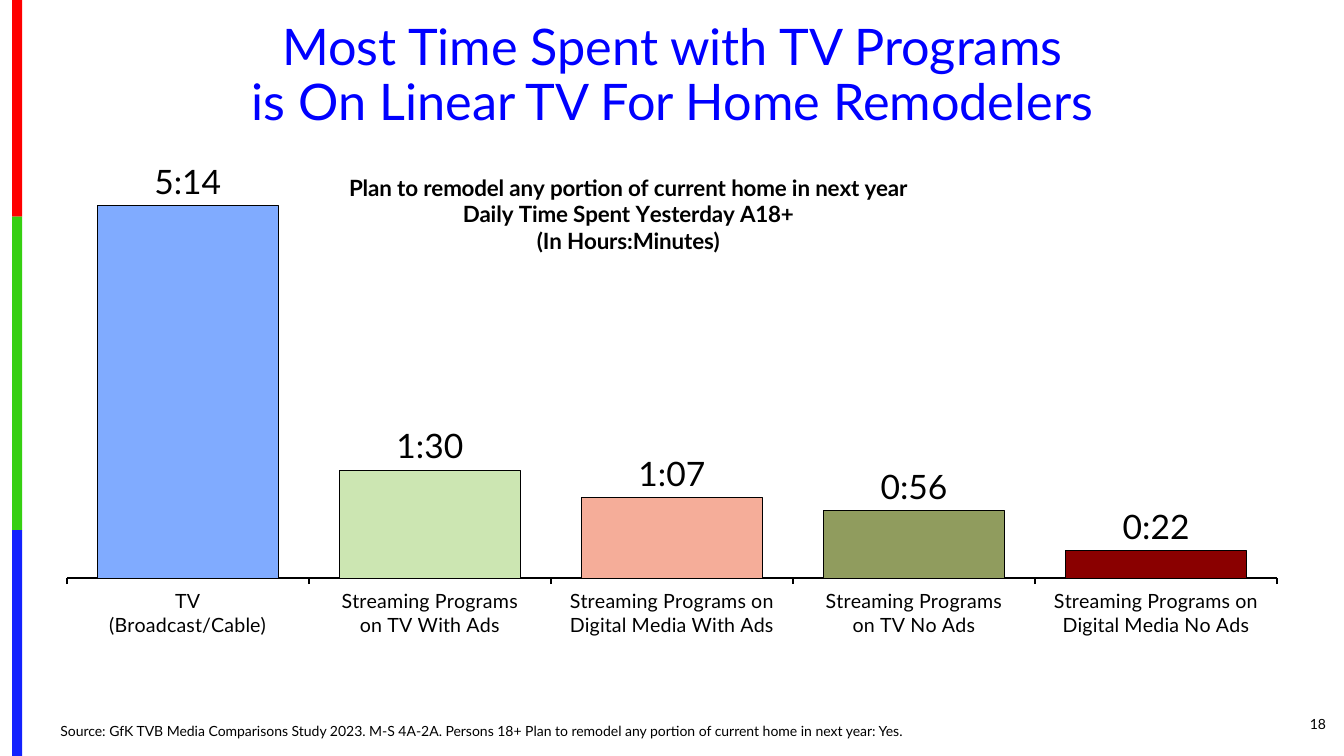
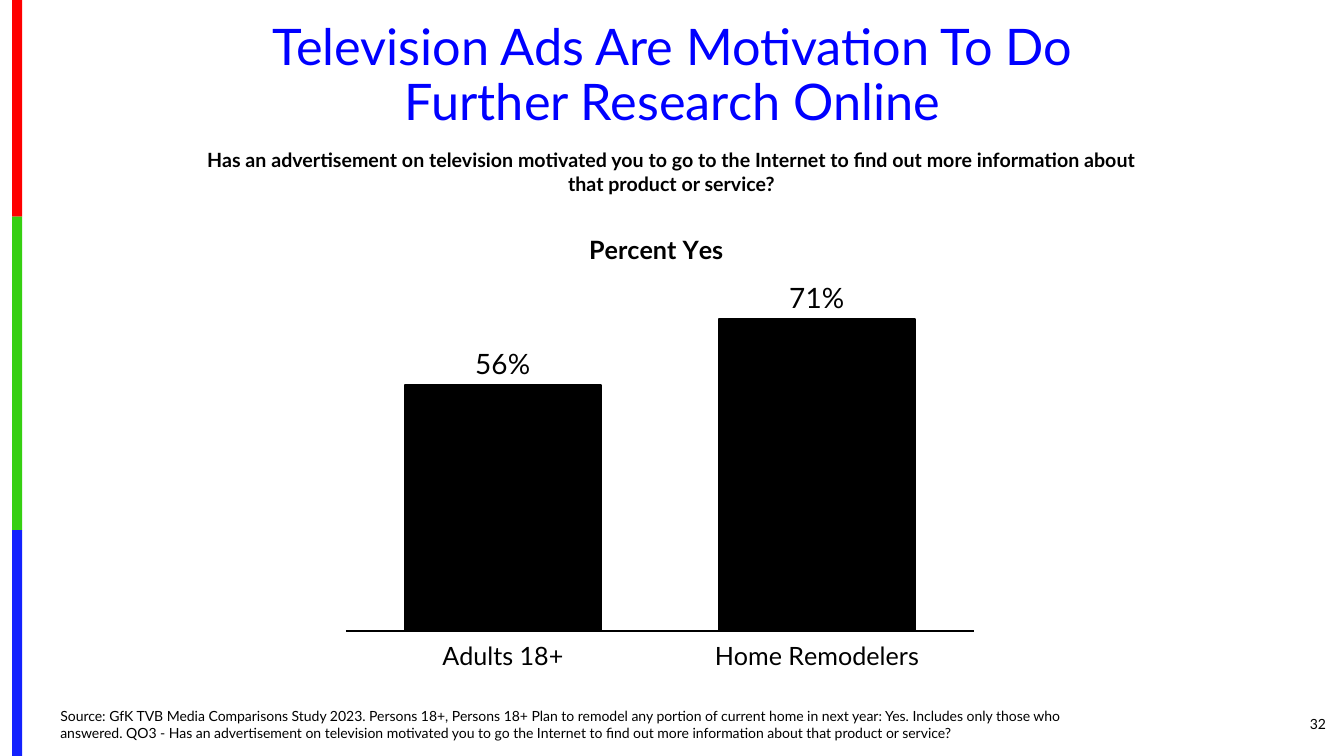
from dataclasses import dataclass

from lxml.etree import SubElement
from pptx import Presentation
from pptx.chart.data import CategoryChartData
from pptx.dml.color import RGBColor
from pptx.enum.chart import XL_CHART_TYPE, XL_LABEL_POSITION, XL_TICK_LABEL_POSITION, XL_TICK_MARK
from pptx.enum.shapes import MSO_SHAPE
from pptx.enum.text import MSO_ANCHOR, PP_ALIGN
from pptx.oxml.ns import qn
from pptx.util import Inches, Pt


@dataclass(frozen=True)
class Theme:
    font: str = "Lato"
    title_color: str = "0000FF"
    ink: str = "000000"
    bands: tuple = (("FE0000", 2.15), ("36CF12", 3.11), ("1322FE", 2.24))
    title_size: int = 36
    question_size: int = 14
    small_size: int = 10


THEME = Theme()

SLIDES = [
    {
        "title": ["Most Time Spent with TV Programs", "is On Linear TV For Home Remodelers"],
        "number": "18",
        "source": {
            "text": "Source: GfK TVB Media Comparisons Study 2023. M-S 4A-2A. Persons 18+ Plan to remodel "
                    "any portion of current home in next year: Yes.",
            "box": (0.5, 7.14, 9.58, 0.25),
            "line_spacing": 0.9,
        },
        "chart": {
            "box": (0.54, 1.42, 12.25, 5.45),
            "plot": (0.01, 0.014, 0.98, 0.778),
            "title": ["Plan to remodel any portion of current home in next year",
                      "Daily Time Spent Yesterday A18+", "(In Hours:Minutes)"],
            "title_at": (0.236, 0.048),
            "title_size": 16,
            "bars": [
                ("TV\n(Broadcast/Cable)", 0.218056, "80ABFF"),
                ("Streaming Programs\non TV With Ads", 0.063194, "CCE6B2"),
                ("Streaming Programs on Digital Media With Ads", 0.047222, "F5AD99"),
                ("Streaming Programs\non TV No Ads", 0.039583, "909C5E"),
                ("Streaming Programs on Digital Media No Ads", 0.015972, "8A0000"),
            ],
            "maximum": 0.25,
            "format": "h:mm;@",
            "gap": 34,
            "outline": 0.75,
            "tick": XL_TICK_MARK.OUTSIDE,
            "category_size": 14,
            "label_size": 24,
        },
    },
    {
        "title": ["Television Ads Are Motivation To Do", "Further Research Online"],
        "number": "32",
        "question": "Has an advertisement on television motivated you to go to the Internet to find out "
                    "more information about that product or service?",
        "source": {
            "text": "Source: GfK TVB Media Comparisons Study 2023. Persons 18+, Persons 18+ Plan to remodel "
                    "any portion of current home in next year: Yes. Includes only those who answered. "
                    "QO3 - Has an advertisement on television motivated you to go the Internet to find out "
                    "more information about that product or service?",
            "box": (0.5, 6.79, 10.25, 0.61),
            "line_spacing": 1.0,
        },
        "chart": {
            "box": (3.42, 2.03, 6.25, 5.04),
            "plot": (0.0, 0.147, 1.0, 0.692),
            "title": ["Percent Yes"],
            "title_at": (0.38, 0.043),
            "title_size": 18,
            "bars": [("Adults 18+", 0.56, "000000"), ("Home Remodelers", 0.71, "000000")],
            "maximum": 0.8,
            "format": "0%",
            "gap": 60,
            "outline": 1.5,
            "tick": XL_TICK_MARK.NONE,
            "category_size": 18,
            "label_size": 20,
        },
    },
]


def rgb(color):
    return RGBColor.from_string(color)


def style_font(font, size, color=THEME.ink, bold=False):
    font.name = THEME.font
    font.size = Pt(size)
    font.bold = bold
    font.color.rgb = rgb(color)


def add_text(slide, box, lines, size, color=THEME.ink, bold=False, align=PP_ALIGN.LEFT,
             anchor=MSO_ANCHOR.TOP, line_spacing=1.0):
    frame = slide.shapes.add_textbox(*map(Inches, box)).text_frame
    frame.word_wrap = True
    frame.vertical_anchor = anchor
    paragraph = frame.paragraphs[0]
    paragraph.alignment = align
    paragraph.line_spacing = line_spacing
    for index, line in enumerate(lines):
        if index:
            paragraph.add_line_break()
        run = paragraph.add_run()
        run.text = line
        style_font(run.font, size, color, bold)


def add_bands(slide):
    top = 0
    for color, height in THEME.bands:
        band = slide.shapes.add_shape(MSO_SHAPE.RECTANGLE, Inches(0.12), Inches(top),
                                      Inches(0.1), Inches(height))
        band.shadow.inherit = False
        band.fill.solid()
        band.fill.fore_color.rgb = rgb(color)
        band.line.fill.background()
        top += height


def set_layout(element, index, settings):
    for old_layout in element.findall(qn("c:layout")):
        element.remove(old_layout)
    layout = element.makeelement(qn("c:layout"))
    manual = SubElement(layout, qn("c:manualLayout"))
    for name, value in settings:
        SubElement(manual, qn(f"c:{name}")).set("val", str(value))
    element.insert(index, layout)


def add_chart_title(chart, content):
    chart.has_title = True
    frame = chart.chart_title.text_frame
    for index, line in enumerate(content["title"]):
        paragraph = frame.add_paragraph() if index else frame.paragraphs[0]
        run = paragraph.add_run()
        run.text = line
        style_font(run.font, content["title_size"], bold=True)
    left, top = content["title_at"]
    set_layout(chart.chart_title._element, 1,
               [("xMode", "edge"), ("yMode", "edge"), ("x", left), ("y", top)])


def add_bar_chart(slide, content):
    categories, values, colors = zip(*content["bars"])
    data = CategoryChartData(number_format=content["format"])
    data.categories = categories
    data.add_series("Series 1", values)
    chart = slide.shapes.add_chart(XL_CHART_TYPE.COLUMN_CLUSTERED,
                                   *map(Inches, content["box"]), data).chart
    style_font(chart.font, THEME.small_size)
    chart.has_legend = False
    add_chart_title(chart, content)
    left, top, width, height = content["plot"]
    set_layout(chart._chartSpace.find(f".//{qn('c:plotArea')}"), 0,
               [("layoutTarget", "inner"), ("xMode", "edge"), ("yMode", "edge"),
                ("x", left), ("y", top), ("w", width), ("h", height)])

    value_axis = chart.value_axis
    value_axis.minimum_scale = 0
    value_axis.maximum_scale = content["maximum"]
    value_axis.has_major_gridlines = False
    value_axis.visible = False

    category_axis = chart.category_axis
    category_axis.major_tick_mark = content["tick"]
    category_axis.minor_tick_mark = XL_TICK_MARK.NONE
    category_axis.tick_label_position = XL_TICK_LABEL_POSITION.LOW
    category_axis.format.line.color.rgb = rgb(THEME.ink)
    category_axis.format.line.width = Pt(1.5)
    style_font(category_axis.tick_labels.font, content["category_size"])

    plot = chart.plots[0]
    plot.vary_by_categories = False
    plot.gap_width = content["gap"]
    plot.has_data_labels = True
    labels = plot.data_labels
    labels.show_value = True
    labels.position = XL_LABEL_POSITION.OUTSIDE_END
    labels.number_format = content["format"]
    labels.number_format_is_linked = False
    style_font(labels.font, content["label_size"])

    for index, color in enumerate(colors):
        bar = plot.series[0].points[index].format
        bar.fill.solid()
        bar.fill.fore_color.rgb = rgb(color)
        bar.line.color.rgb = rgb(THEME.ink)
        bar.line.width = Pt(content["outline"])


def build_slide(presentation, content):
    slide = presentation.slides.add_slide(presentation.slide_layouts[6])
    add_bands(slide)
    add_text(slide, (0.46, 0.17, 12.42, 1.19), content["title"], THEME.title_size,
             THEME.title_color, align=PP_ALIGN.CENTER, line_spacing=0.9)
    if "question" in content:
        add_text(slide, (1.87, 1.42, 9.58, 0.57), [content["question"]], THEME.question_size,
                 bold=True, align=PP_ALIGN.CENTER)
    add_bar_chart(slide, content["chart"])
    source = content["source"]
    add_text(slide, source["box"], [source["text"]], THEME.small_size,
             anchor=MSO_ANCHOR.BOTTOM, line_spacing=source["line_spacing"])
    add_text(slide, (12.17, 6.98, 1.08, 0.4), [content["number"]], THEME.small_size,
             align=PP_ALIGN.RIGHT, anchor=MSO_ANCHOR.MIDDLE)


def main():
    presentation = Presentation()
    presentation.slide_width = Inches(13.33)
    presentation.slide_height = Inches(7.5)
    for content in SLIDES:
        build_slide(presentation, content)
    presentation.save("out.pptx")


if __name__ == "__main__":
    main()
